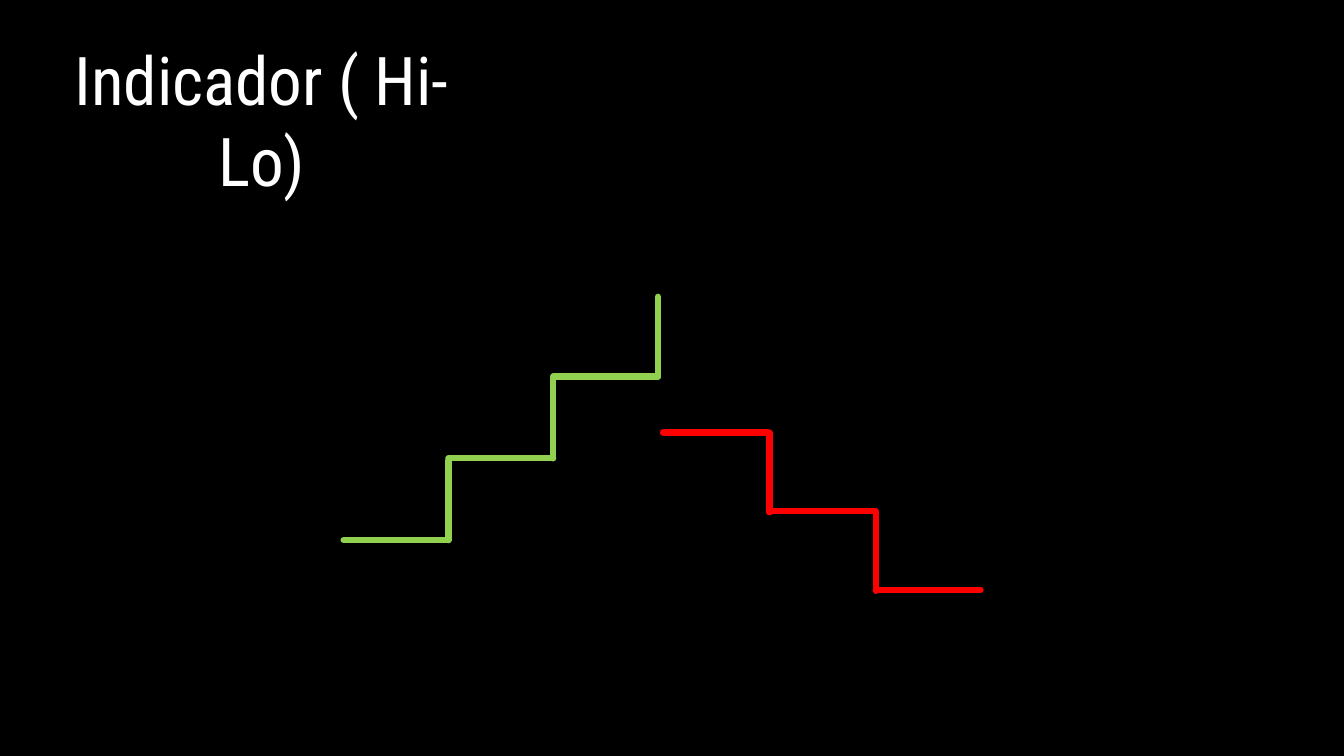
"""Build the Hi-Lo indicator slide with a rising and a falling staircase."""
from dataclasses import dataclass

from lxml import etree
from pptx import Presentation
from pptx.dml.color import RGBColor
from pptx.enum.shapes import MSO_CONNECTOR
from pptx.enum.text import MSO_ANCHOR, MSO_AUTO_SIZE, PP_ALIGN
from pptx.oxml.ns import qn
from pptx.slide import Slide
from pptx.util import Cm, Pt

STRAIGHT = MSO_CONNECTOR.STRAIGHT
TOP = MSO_ANCHOR.TOP
FIT_SHAPE = MSO_AUTO_SIZE.SHAPE_TO_FIT_TEXT
CENTER = PP_ALIGN.CENTER

BLACK = RGBColor(0x00, 0x00, 0x00)
WHITE = RGBColor(0xFF, 0xFF, 0xFF)
GREEN = RGBColor(0x92, 0xD0, 0x50)
RED = RGBColor(0xFF, 0x00, 0x00)
FONT = "Roboto Condensed"
TREAD = 2.64
RISER = 2.01


@dataclass(frozen=True)
class Staircase:
    left: float
    top: float
    step_x: float
    step_y: float
    riser_end: float
    risers: int
    treads: int
    color: RGBColor


STAIRCASES = [
    Staircase(8.66, 13.61, 2.64, -2.06, -RISER, 3, 3, GREEN),
    Staircase(16.71, 10.9, 2.68, 1.98, RISER, 2, 3, RED),
]


def add_line(s: Slide, x1: float, y1: float, x2: float, y2: float,
             color: RGBColor) -> None:
    line = s.shapes.add_connector(STRAIGHT, Cm(x1), Cm(y1), Cm(x2), Cm(y2))
    line.line.color.rgb = color
    line.line.width = Pt(4.5)
    sp_pr = line._element.spPr
    sp_pr.find(qn("a:ln")).set("cap", "rnd")
    etree.SubElement(sp_pr, qn("a:effectLst"))


def add_staircase(s: Slide, stairs: Staircase) -> None:
    for i in range(stairs.treads):
        x = stairs.left + i * stairs.step_x
        y = stairs.top + i * stairs.step_y
        add_line(s, x, y, x + TREAD, y, stairs.color)
        if i < stairs.risers:
            corner = x + stairs.step_x
            add_line(s, corner, y, corner, y + stairs.riser_end, stairs.color)


def add_title(s: Slide, text: str) -> None:
    title = s.shapes.title
    title.left, title.top = Cm(1.45), Cm(0.84)
    title.width, title.height = Cm(10.29), Cm(2.31)
    tf = title.text_frame
    tf.text = text
    tf.word_wrap = True
    tf.auto_size = FIT_SHAPE
    tf.vertical_anchor = TOP
    p = tf.paragraphs[0]
    p.alignment = CENTER
    font = p.runs[0].font
    font.name = FONT
    font.size = Pt(48)
    font.color.rgb = WHITE


def main() -> None:
    prs = Presentation()
    prs.slide_width, prs.slide_height = Cm(33.87), Cm(19.05)
    s = prs.slides.add_slide(prs.slide_layouts[5])
    s.background.fill.solid()
    s.background.fill.fore_color.rgb = BLACK
    add_title(s, "Indicador ( Hi-Lo)")
    for stairs in STAIRCASES:
        add_staircase(s, stairs)
    prs.save("out.pptx")


if __name__ == "__main__":
    main()
